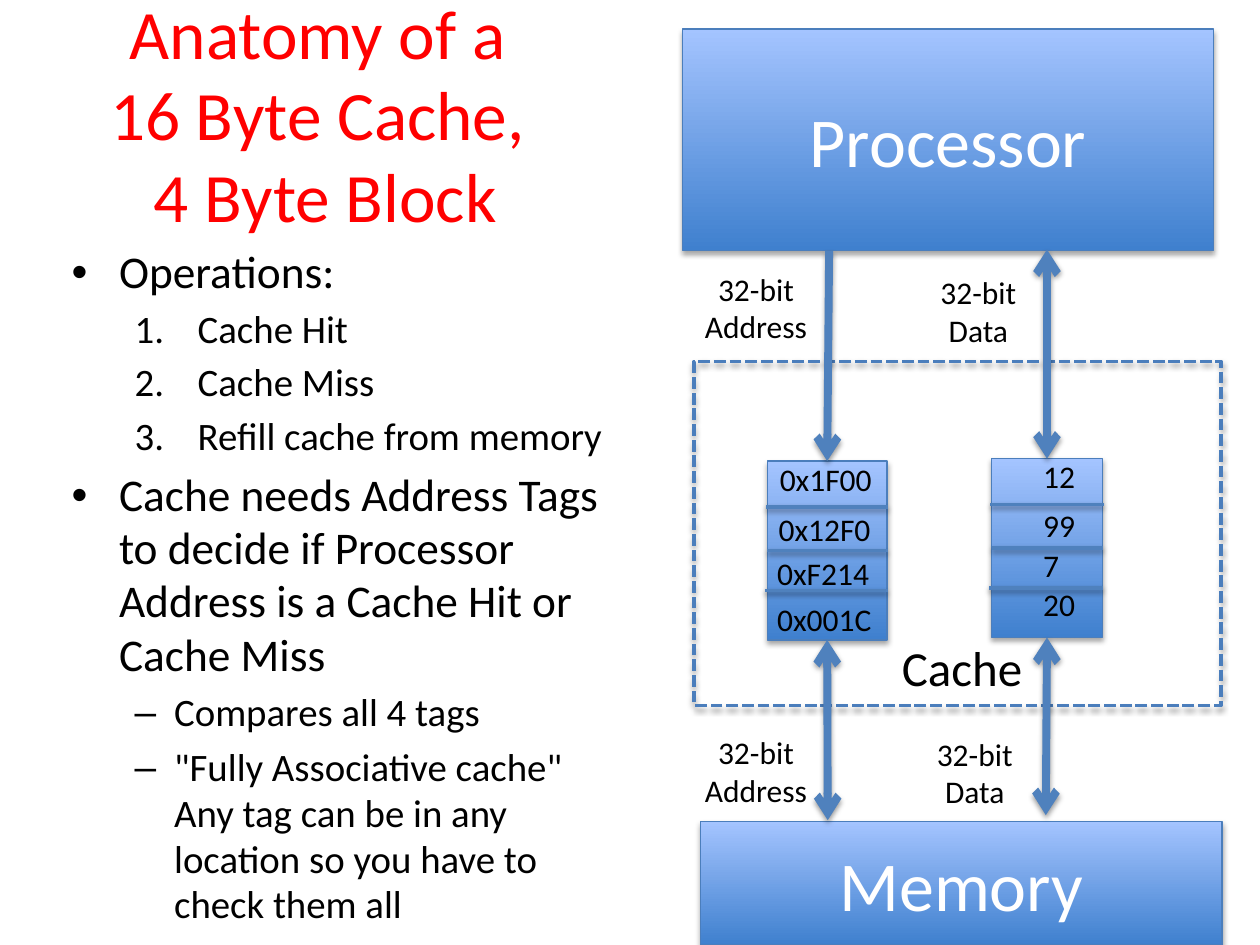
from lxml.etree import SubElement
from pptx import Presentation
from pptx.dml.color import RGBColor
from pptx.enum.dml import MSO_LINE
from pptx.enum.shapes import MSO_CONNECTOR as Connector, MSO_SHAPE as Shape
from pptx.enum.text import MSO_ANCHOR as Anchor, MSO_AUTO_SIZE as AutoSize, PP_ALIGN as Align
from pptx.oxml.ns import qn
from pptx.util import Pt

TOP, BOTTOM = 0, 2


def color(hex_text):
    return RGBColor.from_string(hex_text)


class CacheSlide:
    font = "Calibri"
    black, white, red = "000000", "FFFFFF", "FF0000"
    outline, arrow_color = "4B7EBC", "4F81BD"
    gradient = ("3F80CE", "A4C4FF")

    def __init__(self, presentation):
        self.slide = presentation.slides.add_slide(presentation.slide_layouts[1])
        self.shapes = self.slide.shapes

    def add_runs(self, paragraph, text, size, ink):
        for index, line in enumerate(text.split("\n")):
            if index:
                paragraph.add_line_break()
            run = paragraph.add_run()
            run.text = line
            run.font.name, run.font.size = self.font, Pt(size)
            run.font.color.rgb = color(ink)

    def place(self, shape, left, top, width, height):
        shape.left, shape.top = Pt(left), Pt(top)
        shape.width, shape.height = Pt(width), Pt(height)
        shape.text_frame.auto_size = AutoSize.NONE

    def shadow(self, shape, opacity, distance):
        properties = shape._element.spPr
        effects = properties.find(qn("a:effectLst"))
        if effects is None:
            effects = SubElement(properties, qn("a:effectLst"))
        outer = SubElement(effects, qn("a:outerShdw"), blurRad=str(Pt(3.1)),
                           dist=str(Pt(distance)), dir="5400000", rotWithShape="0")
        ink = SubElement(outer, qn("a:srgbClr"), val=self.black)
        SubElement(ink, qn("a:alpha"), val=str(opacity * 1000))

    def title(self, text, *bounds):
        title = self.shapes.title
        self.place(title, *bounds)
        title.text_frame.vertical_anchor = Anchor.MIDDLE
        paragraph = title.text_frame.paragraphs[0]
        paragraph.alignment, paragraph.line_spacing = Align.CENTER, 0.98
        self.add_runs(paragraph, text, 39.6, self.red)

    def body(self, items, *bounds):
        body = self.slide.placeholders[1]
        self.place(body, *bounds)
        frame = body.text_frame
        for index, (level, numbered, text) in enumerate(items):
            paragraph = frame.add_paragraph() if index else frame.paragraphs[0]
            paragraph.level, paragraph.line_spacing = level, 0.98
            if numbered:
                properties = paragraph._p.get_or_add_pPr()
                properties.set("marL", str(Pt(72)))
                properties.set("indent", str(Pt(-36)))
                SubElement(properties, qn("a:buFont"), typeface="+mj-lt")
                SubElement(properties, qn("a:buAutoNum"), type="arabicPeriod")
            self.add_runs(paragraph, text, 22.2 if level else 25.9, self.black)

    def box(self, left, top, width, height, text="", dashed=False):
        box = self.shapes.add_shape(Shape.RECTANGLE, Pt(left), Pt(top), Pt(width), Pt(height))
        box.shadow.inherit = False
        box.line.color.rgb = color(self.outline)
        box.line.width = Pt(2.25 if dashed else 0.75)
        if dashed:
            box.fill.background()
            box.line.dash_style = MSO_LINE.SQUARE_DOT
        else:
            box.fill.gradient()
            box.fill.gradient_angle = 90
            for stop, shade in zip(box.fill.gradient_stops, self.gradient):
                stop.color.rgb = color(shade)
        self.shadow(box, 35, 1.8)
        if text:
            box.text_frame.vertical_anchor = Anchor.MIDDLE
            paragraph = box.text_frame.paragraphs[0]
            paragraph.alignment = Align.CENTER
            self.add_runs(paragraph, text, 40, self.white)
        return box

    def label(self, lines, left, top, width, height, size=18, align=Align.LEFT, wrap=False):
        label = self.shapes.add_textbox(Pt(left), Pt(top), Pt(width), Pt(height))
        frame = label.text_frame
        frame.word_wrap, frame.auto_size = wrap, AutoSize.SHAPE_TO_FIT_TEXT
        for index, line in enumerate(lines):
            paragraph = frame.add_paragraph() if index else frame.paragraphs[0]
            paragraph.alignment = align
            self.add_runs(paragraph, line, size, self.black)

    def line(self, x1, y1, x2, y2, width=2, head=False, tail=False, begin=None, end=None):
        line = self.shapes.add_connector(Connector.STRAIGHT, Pt(x1), Pt(y1), Pt(x2), Pt(y2))
        if begin:
            line.begin_connect(*begin)
        if end:
            line.end_connect(*end)
        line.line.color.rgb = color(self.arrow_color)
        line.line.width = Pt(width)
        outline = line._element.spPr.find(qn("a:ln"))
        for tag, wanted in (("a:headEnd", head), ("a:tailEnd", tail)):
            if wanted:
                SubElement(outline, qn(tag), type="arrow")
        self.shadow(line, 38, 1.6)

    def store(self, left, top, width, height):
        block = self.box(left, top, width, height)
        # Row dividers: offset from the top, overhang left and right
        for offset, before, after in ((26.3, 0.7, 0.7), (51.1, 0, 0.4), (74, 1.4, 0.4)):
            self.line(left - before, top + offset, left + width + after, top + offset)
        return block


def main():
    presentation = Presentation()
    presentation.slide_width, presentation.slide_height = Pt(720), Pt(540)
    page = CacheSlide(presentation)

    # Title and list
    page.title("Anatomy of a \n16 Byte Cache, \n4 Byte Block", 36, 21.6, 300, 90)
    page.body([
        (0, False, "Operations:"),
        (1, True, "Cache Hit"),
        (1, True, "Cache Miss"),
        (1, True, "Refill cache from memory"),
        (0, False, "Cache needs Address Tags to decide if Processor Address is a Cache Hit or Cache Miss"),
        (1, False, "Compares all 4 tags"),
        (1, False, "\"Fully Associative cache\"\nAny tag can be in any location so you have to check them all"),
    ], 33.8, 136.8, 318, 356.4)

    # Processor, cache and memory
    page.box(390.2, 16.6, 303.1, 126.7, "Processor")
    page.box(396.7, 206.6, 301, 196.6, dashed=True)
    page.label(["Cache"], 508.3, 360.7, 84.2, 41, size=28)
    page.box(400.3, 469.4, 298.1, 70.6, "Memory")

    # Bus labels
    for name, left, top, width in (("Address", 395.3, 150.5, 73.4), ("Data", 529.9, 152.6, 58.3),
                                   ("Address", 395.3, 415.4, 73.4), ("Data", 527.8, 416.2, 58.3)):
        page.label(["32-bit", name], left, top, width, 51, align=Align.CENTER)

    # Tag and data stores
    data = page.store(566.6, 262.1, 63.4, 102.2)
    tags = page.store(438.5, 263.5, 68.4, 102.2)
    for tag, left, top in (("0x1F00", 438.5, 259.2), ("0x12F0", 437.8, 288),
                           ("0xF214", 437, 313.2), ("0x001C", 437, 339.1)):
        page.label([tag], left, top, 79, 29, wrap=True)
    for value, top, width in (("12", 257.8, 33), ("99", 285.8, 33), ("7", 308.2, 24), ("20", 330.5, 33)):
        page.label([value], 589, top, width, 29)

    # Address and data buses
    page.line(473.8, 143.5, 473.8, 263.5, 4.5, tail=True, end=(tags, TOP))
    page.line(598.3, 142.6, 598.3, 262.1, 4.5, head=True, tail=True, end=(data, TOP))
    page.line(473, 365.7, 473, 468.7, 4.5, head=True, tail=True, begin=(tags, BOTTOM))
    page.line(598.3, 364.3, 597.6, 465.8, 4.5, head=True, tail=True, begin=(data, BOTTOM))

    presentation.save("out.pptx")


if __name__ == "__main__":
    main()
